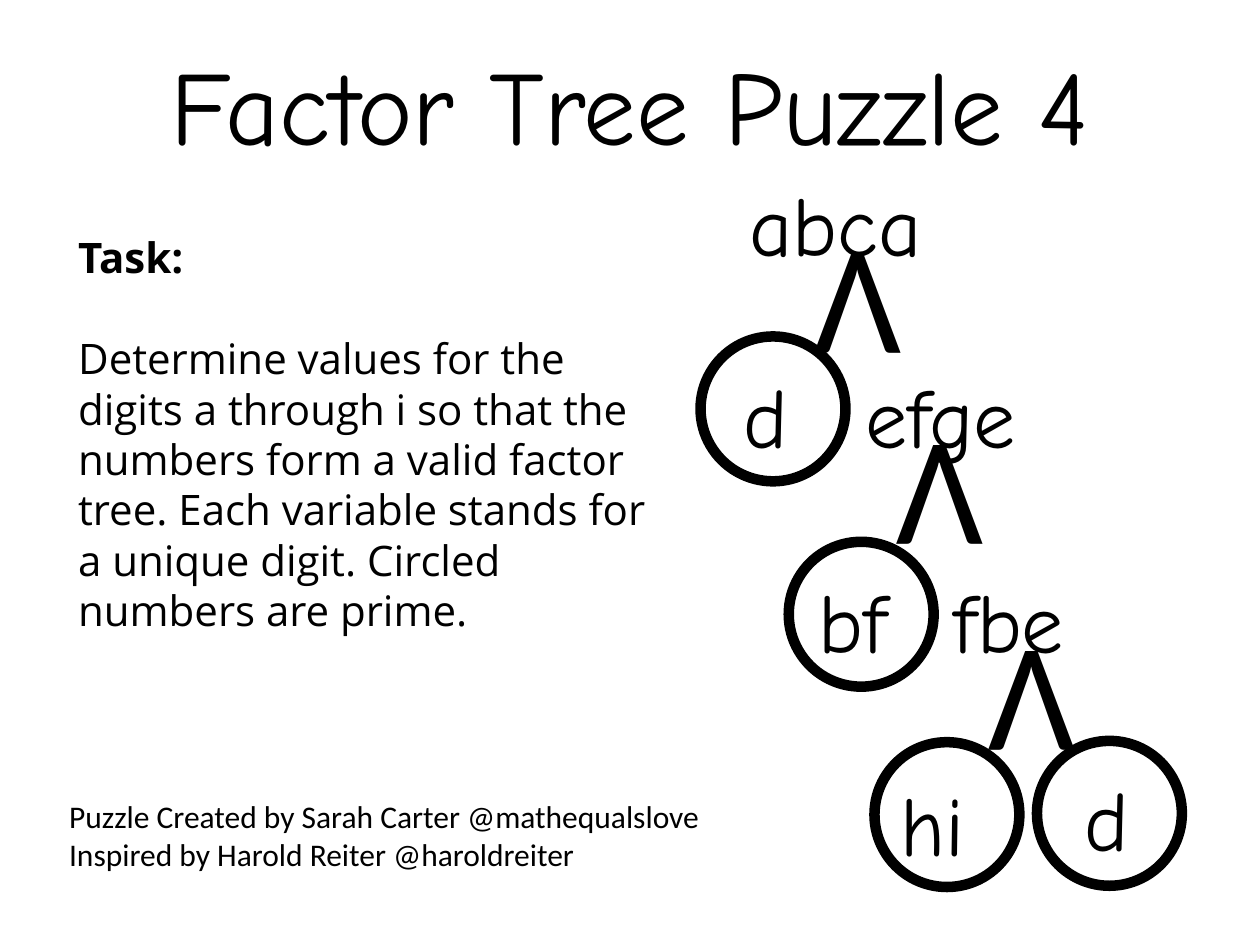
from dataclasses import dataclass

from pptx import Presentation
from pptx.dml.color import RGBColor
from pptx.enum.shapes import MSO_SHAPE
from pptx.enum.text import MSO_ANCHOR, MSO_AUTO_SIZE, PP_ALIGN
from pptx.util import Inches, Pt

OVAL = MSO_SHAPE.OVAL
TOP = MSO_ANCHOR.TOP
NO_AUTOFIT = MSO_AUTO_SIZE.NONE
LEFT, CENTER = PP_ALIGN.LEFT, PP_ALIGN.CENTER


@dataclass(frozen=True)
class Theme:
    ink: RGBColor = RGBColor(0, 0, 0)
    paper: RGBColor = RGBColor(255, 255, 255)
    puzzle_font: str = "Comic Neue"
    task_font: str = "Open Sans"
    plain_font: str = "Calibri"
    title_size: int = 60
    number_size: int = 48
    branch_size: int = 88
    task_size: int = 24
    task_leading: float = 28.8
    credit_size: int = 18
    ring_width: int = 6


THEME = Theme()
RING_SIZE = 1.15
NUMBER_HEIGHT = 0.91

# Upside-down V under each composite number: left, top, width, height
BRANCHES = [
    (6.23, 1.71, 1.02, 1.58),
    (6.94, 3.66, 0.96, 1.15),
    (7.67, 5.29, 0.96, 1.15),
]

# Tree numbers: text, left, top, width, ring position (primes only)
NUMBERS = [
    ("abca", 5.85, 1.32, 2.04, None),
    ("d", 5.8, 2.84, 0.61, (5.56, 2.67)),
    ("efge", 6.77, 2.84, 1.84, None),
    ("bf", 6.4, 4.47, 1.49, (6.26, 4.3)),
    ("fbe", 7.47, 4.47, 1.47, None),
    ("hi", 7.05, 6.08, 1.04, (6.94, 5.89)),
    ("d", 8.51, 6.04, 0.75, (8.23, 5.88)),
]

TASK = [
    "Task:",
    "Determine values for the digits a through i so that the numbers form "
    "a valid factor tree. Each variable stands for a unique digit. "
    "Circled numbers are prime.",
]
CREDITS = [
    "Puzzle Created by Sarah Carter @mathequalslove",
    "Inspired by Harold Reiter @haroldreiter",
]


def write(holder, lines, font_name, size, align=LEFT):
    """Fill a text box or placeholder and return its paragraphs."""
    frame = holder.text_frame
    frame.text = "\n".join(lines)
    frame.word_wrap = True
    frame.auto_size = NO_AUTOFIT
    frame.vertical_anchor = TOP
    for paragraph in frame.paragraphs:
        paragraph.alignment = align
        paragraph.font.name = font_name
        paragraph.font.size = Pt(size)
        paragraph.font.color.rgb = THEME.ink
    return frame.paragraphs


def place(placeholder, left, top, width, height):
    placeholder.left, placeholder.top = Inches(left), Inches(top)
    placeholder.width, placeholder.height = Inches(width), Inches(height)


def add_text(slide, box, lines, font_name, size):
    holder = slide.shapes.add_textbox(*map(Inches, box))
    write(holder, lines, font_name, size)
    return holder


def add_ring(slide, left, top):
    ring = slide.shapes.add_shape(
        OVAL, *map(Inches, (left, top, RING_SIZE, RING_SIZE)))
    ring.shadow.inherit = False
    ring.fill.solid()
    ring.fill.fore_color.rgb = THEME.paper
    ring.line.color.rgb = THEME.ink
    ring.line.width = Pt(THEME.ring_width)


def add_title(slide):
    title = slide.shapes.title
    place(title, 0, 0.27, 10, 1.41)
    write(title, ["Factor Tree Puzzle 4"], THEME.puzzle_font,
          THEME.title_size, CENTER)


def add_task(slide):
    body = slide.placeholders[1]
    place(body, 0.52, 1.79, 4.89, 3.33)
    paragraphs = write(body, TASK, THEME.task_font, THEME.task_size)
    for paragraph in paragraphs:
        paragraph.line_spacing = Pt(THEME.task_leading)
        paragraph.space_before = Pt(0)
        # No bullet or hanging indent
        properties = paragraph._p.get_or_add_pPr()
        properties.set("marL", "0")
        properties.set("indent", "0")
        bullet_off = properties.makeelement(
            "{http://schemas.openxmlformats.org/drawingml/2006/main}buNone", {})
        properties.find("{*}defRPr").addprevious(bullet_off)
    heading = paragraphs[0]
    heading.font.bold = True
    heading.space_after = Pt(THEME.task_leading)


def add_tree(slide):
    for box in BRANCHES:
        branch = add_text(slide, box, ["V"], THEME.plain_font,
                          THEME.branch_size)
        branch.rotation = 180
    for text, left, top, width, ring in NUMBERS:
        if ring:
            add_ring(slide, *ring)
        add_text(slide, (left, top, width, NUMBER_HEIGHT), [text],
                 THEME.puzzle_font, THEME.number_size)


def main():
    prs = Presentation()
    prs.slide_width, prs.slide_height = Inches(10), Inches(7.5)
    slide = prs.slides.add_slide(prs.slide_layouts[1])

    # Heading and instructions
    add_title(slide)
    add_task(slide)

    # Factor tree
    add_tree(slide)

    # Credits
    add_text(slide, (0.45, 6.28, 5.69, 0.71), CREDITS,
             THEME.plain_font, THEME.credit_size)

    prs.save("out.pptx")


if __name__ == "__main__":
    main()
